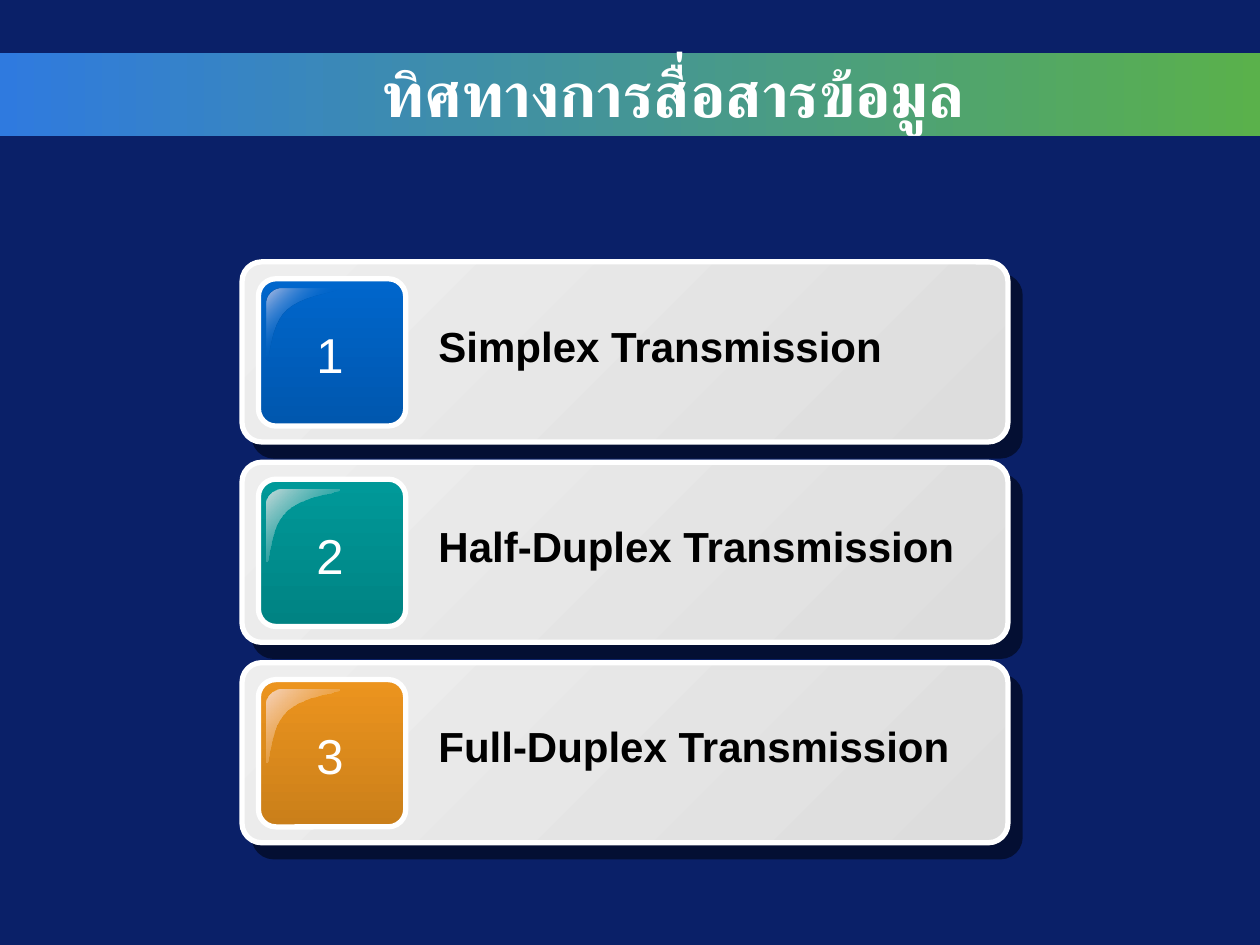
import pptx
import pptx.dml.color
import pptx.enum.shapes
import pptx.enum.text
import pptx.oxml.ns
import pptx.util
from lxml import etree
from pptx.util import Cm

COLORS = {
    "background": "0A2068",
    "band_left": "2F7ADF",
    "band_right": "5AB14B",
    "panel_light": "EEEEEE",
    "panel_dark": "DDDDDD",
    "white": "FFFFFF",
    "black": "000000",
}

# label, button top, button bottom, gloss colour, where the gloss has faded out
ROWS = [
    ("Simplex Transmission", "0066CC", "0057AE", "B5C0E5", 0.5),
    ("Half-Duplex Transmission", "009999", "008383", "C9DBDB", 1),
    ("Full-Duplex Transmission", "EC941E", "CA7F1A", "F6D4BF", 1),
]
FIRST_TOP, ROW_PITCH = 5.28, 4.04

# Gloss outline in cm: cubic curves, each as four control points
GLOSS_CURVES = [
    [(0.3, 0), (0.15, 0), (0, 0.13), (0, 0.3)],
    [(0, 1.47), (0.08, 1.5), (0.05, 0.76), (0.41, 0.43)],
    [(0.41, 0.43), (0.79, 0.1), (1.5, 0.08), (1.47, 0)],
]


def rgb(value):
    return pptx.dml.color.RGBColor.from_string(value)


def add_element(parent, tag, **attributes):
    return etree.SubElement(parent, pptx.oxml.ns.qn(tag), attributes)


def curve_points(controls, steps=12):
    weights = (1, 3, 3, 1)
    for step in range(steps + 1):
        t = step / steps
        yield tuple(
            Cm(sum(w * (1 - t) ** (3 - i) * t ** i * point[axis]
                   for i, (w, point) in enumerate(zip(weights, controls))))
            for axis in (0, 1))


class SlideBuilder:
    font_name = "Arial"
    outline_width = pptx.util.Pt(3)

    def __init__(self, slide):
        self.slide = slide
        slide.background.fill.solid()
        slide.background.fill.fore_color.rgb = rgb(COLORS["background"])

    def gradient(self, shape, start, end, angle):
        """Fill with two colours; the angle runs clockwise."""
        shape.fill.gradient()
        shape.fill.gradient_angle = -angle % 360
        for stop, color in zip(shape.fill.gradient_stops, (start, end)):
            stop.color.rgb = rgb(color)

    def format_text(self, frame, text, size, color, bold=False, align=None):
        frame.text = text
        paragraph = frame.paragraphs[0]
        paragraph.alignment = align
        paragraph.font.name = self.font_name
        paragraph.font.size = pptx.util.Pt(size)
        paragraph.font.bold = bold
        paragraph.font.color.rgb = rgb(color)

    def title(self, text, left, top, width, height):
        title = self.slide.shapes.title
        title.left, title.top = Cm(left), Cm(top)
        title.width, title.height = Cm(width), Cm(height)
        frame = title.text_frame
        frame.auto_size = pptx.enum.text.MSO_AUTO_SIZE.NONE
        frame.vertical_anchor = pptx.enum.text.MSO_ANCHOR.MIDDLE
        self.format_text(frame, text, 36, COLORS["white"], True,
                         pptx.enum.text.PP_ALIGN.RIGHT)

    def band(self, left, top, width, height):
        band = self.slide.shapes.add_shape(
            pptx.enum.shapes.MSO_SHAPE.RECTANGLE,
            Cm(left), Cm(top), Cm(width), Cm(height))
        band.shadow.inherit = False
        band.line.fill.background()
        self.gradient(band, COLORS["band_left"], COLORS["band_right"], 0)
        self.slide.shapes.title._element.addprevious(band._element)

    def rounded(self, group, left, top, width, height, radius, colors, angle):
        shape = group.shapes.add_shape(
            pptx.enum.shapes.MSO_SHAPE.ROUNDED_RECTANGLE,
            Cm(left), Cm(top), Cm(width), Cm(height))
        shape.adjustments[0] = radius
        shape.shadow.inherit = False
        self.gradient(shape, *colors, angle)
        shape.line.color.rgb = rgb(COLORS["white"])
        shape.line.width = self.outline_width
        return shape

    def cast_shadow(self, shape):
        effects = shape._element.spPr.find(pptx.oxml.ns.qn("a:effectLst"))
        shadow = add_element(effects, "a:outerShdw", dist="134620",
                             dir="2940000", algn="ctr", rotWithShape="0")
        color = add_element(shadow, "a:srgbClr", val=COLORS["black"])
        add_element(color, "a:alpha", val="50000")

    def gloss(self, group, left, top, color, button_color, fade_end):
        points = [point for curve in GLOSS_CURVES
                  for point in curve_points(curve)]
        builder = group.shapes.build_freeform(*points[0])
        builder.add_line_segments(points[1:], close=True)
        shape = builder.convert_to_shape(Cm(left), Cm(top))
        shape.shadow.inherit = False
        shape.line.fill.background()
        self.gradient(shape, color, button_color, 45)
        shape.fill.gradient_stops[1].position = fade_end
        last_color = shape._element.spPr.xpath(".//a:gs/a:srgbClr")[-1]
        add_element(last_color, "a:alpha", val="0")

    def text(self, group, text, left, top, width, height, size, color,
             bold=False, align=None, wrap=True):
        box = group.shapes.add_textbox(
            Cm(left), Cm(top), Cm(width), Cm(height))
        frame = box.text_frame
        frame.word_wrap = wrap
        frame.auto_size = pptx.enum.text.MSO_AUTO_SIZE.SHAPE_TO_FIT_TEXT
        self.format_text(frame, text, size, color, bold, align)

    def row(self, number, top, label, button_top, button_bottom, gloss, fade_end):
        group = self.slide.shapes.add_group_shape()
        panel = self.rounded(group, 4.88, top, 15.44, 3.63, 0.109,
                             (COLORS["panel_light"], COLORS["panel_dark"]), 45)
        self.cast_shadow(panel)
        self.rounded(group, 5.21, top + 0.34, 2.97, 2.97, 0.119,
                     (button_top, button_bottom), 90)
        self.gloss(group, 5.38, top + 0.54, gloss, button_top, fade_end)
        self.text(group, str(number), 6.12, top + 1.14, 1.07, 1.45, 28,
                  COLORS["white"], align=pptx.enum.text.PP_ALIGN.CENTER,
                  wrap=False)
        self.text(group, label, 8.59, top + 1.05, 11.35, 1.3, 24,
                  COLORS["black"], bold=True)


def main():
    presentation = pptx.Presentation()
    presentation.slide_width, presentation.slide_height = Cm(25.4), Cm(19.05)
    title_only = presentation.slide_layouts[5]
    builder = SlideBuilder(presentation.slides.add_slide(title_only))

    # Heading on its coloured band
    builder.title("ทิศทางการสื่อสารข้อมูล", 1.27, 1.07, 18.42, 1.57)
    builder.band(0, 1.06, 25.4, 1.69)

    # Numbered transmission modes
    for index, row in enumerate(ROWS):
        builder.row(index + 1, FIRST_TOP + index * ROW_PITCH, *row)

    presentation.save("out.pptx")


if __name__ == "__main__":
    main()
